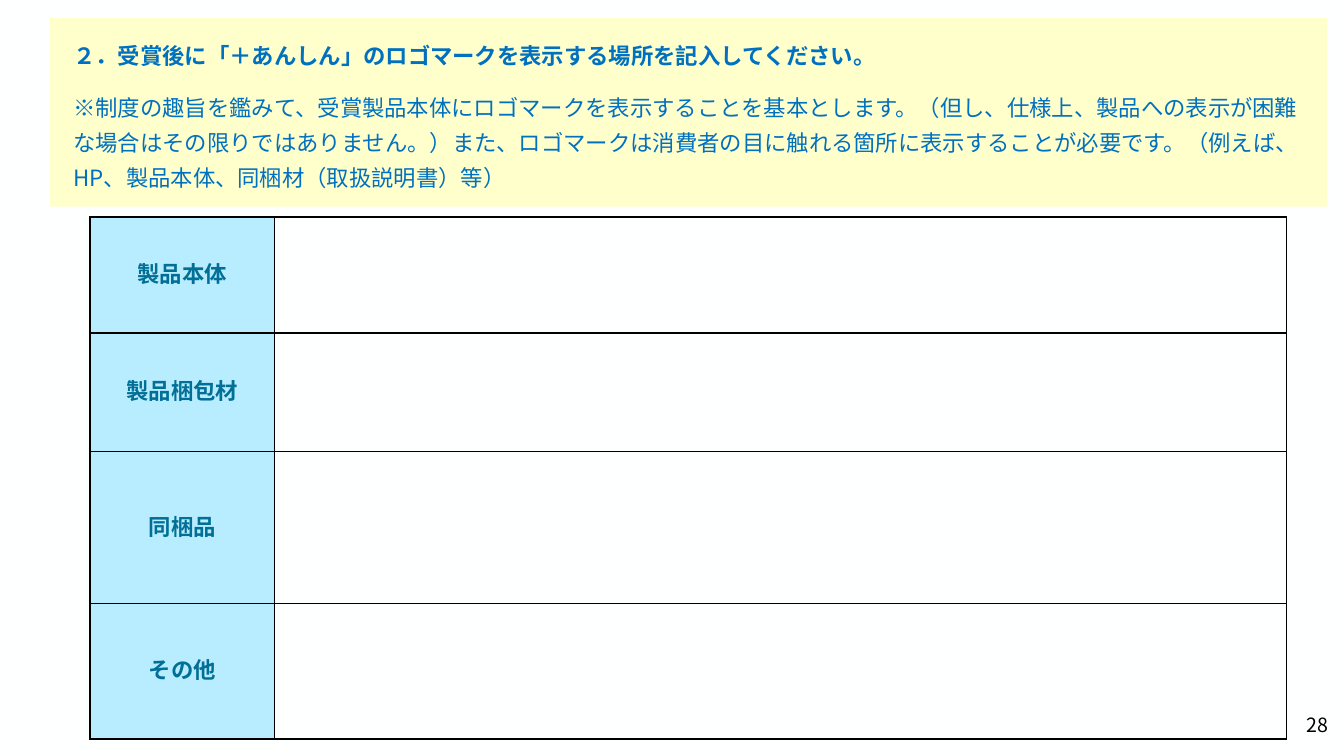
from lxml.etree import SubElement
from pptx import Presentation
from pptx.dml.color import RGBColor
from pptx.enum.shapes import MSO_SHAPE as Shape
from pptx.enum.text import MSO_ANCHOR as Anchor, PP_ALIGN as Align
from pptx.oxml.ns import qn
from pptx.util import Cm, Pt

COLORS = {"page": "FEFFFF", "note": "FFFFCC", "blue": "0070C0",
          "label": "B8ECFF", "teal": "016F96", "black": "000000"}
SANS, LATIN = "Noto Sans CJK JP", "Calibri"
NOTE = [
    ("２．受賞後に「＋あんしん」のロゴマークを表示する場所を記入してください。", True),
    ("※制度の趣旨を鑑みて、受賞製品本体にロゴマークを表示することを基本とします。"
     "（但し、仕様上、製品への表示が困難な場合はその限りではありません。）"
     "また、ロゴマークは消費者の目に触れる箇所に表示することが必要です。"
     "（例えば、HP、製品本体、同梱材（取扱説明書）等）", False),
]
ROWS = [("製品本体", 2.92), ("製品梱包材", 2.99), ("同梱品", 3.83), ("その他", 3.41)]
COLUMNS = [4.65, 25.5]
PAGE = "28"


def rgb(name):
    return RGBColor.from_string(COLORS[name])


def write(p, text, size=16, font=SANS, color="blue", bold=False, align=Align.LEFT):
    p.alignment = align
    r = p.add_run()
    r.text = text
    r.font.size, r.font.bold, r.font.name = Pt(size), bold, font
    r.font.color.rgb = rgb(color)
    SubElement(r.font._element, qn("a:ea"), typeface=font)


def set_insets(tf, left, top, right, bottom):
    tf.margin_left, tf.margin_top = Cm(left), Cm(top)
    tf.margin_right, tf.margin_bottom = Cm(right), Cm(bottom)


def set_borders(cell):
    props = cell._tc.get_or_add_tcPr()
    for i, side in enumerate(("lnL", "lnR", "lnT", "lnB")):
        line = props.makeelement(qn(f"a:{side}"), {"w": str(Pt(1))})
        fill = SubElement(line, qn("a:solidFill"))
        SubElement(fill, qn("a:srgbClr"), val=COLORS["black"])
        props.insert(i, line)


def add_note(s):
    sp = s.shapes.add_shape(Shape.RECTANGLE, Cm(1.25), Cm(0.46), Cm(32.2), Cm(4.75))
    sp.shadow.inherit = False
    sp.fill.solid()
    sp.fill.fore_color.rgb = rgb("note")
    sp.line.fill.background()
    tf = sp.text_frame
    tf.word_wrap, tf.vertical_anchor = True, Anchor.MIDDLE
    set_insets(tf, 0.6, 0.4, 0.6, 0.4)
    for i, (text, bold) in enumerate(NOTE):
        p = tf.add_paragraph() if i else tf.paragraphs[0]
        p.line_spacing, p.space_before, p.space_after = 1.3, Pt(6 if i else 0), Pt(6)
        write(p, text, bold=bold)


def add_form(s):
    height = sum(h for _, h in ROWS)
    table = s.shapes.add_table(len(ROWS), len(COLUMNS), Cm(2.27), Cm(5.47),
                               Cm(sum(COLUMNS)), Cm(height)).table
    table.first_row = table.horz_banding = False
    for column, width in zip(table.columns, COLUMNS):
        column.width = Cm(width)
    for row, (label, h) in zip(table.rows, ROWS):
        row.height = Cm(h)
        for cell in row.cells:
            cell.fill.background()
            cell.vertical_anchor = Anchor.MIDDLE
            set_borders(cell)
        head = row.cells[0]
        head.fill.solid()
        head.fill.fore_color.rgb = rgb("label")
        write(head.text_frame.paragraphs[0], label, font=LATIN, color="teal",
              bold=True, align=Align.CENTER)


def add_page_number(s):
    tf = s.shapes.add_textbox(Cm(32.42), Cm(17.88), Cm(1.45), Cm(1.17)).text_frame
    tf.word_wrap, tf.vertical_anchor = True, Anchor.MIDDLE
    set_insets(tf, 0, 0, 0.4, 0.4)
    write(tf.paragraphs[0], PAGE, size=14, color="black", align=Align.RIGHT)


def main():
    prs = Presentation()
    prs.slide_width, prs.slide_height = Cm(33.87), Cm(19.05)
    s = prs.slides.add_slide(prs.slide_layouts[6])
    s.background.fill.solid()
    s.background.fill.fore_color.rgb = rgb("page")
    add_note(s)
    add_form(s)
    add_page_number(s)
    prs.save("out.pptx")


if __name__ == "__main__":
    main()
